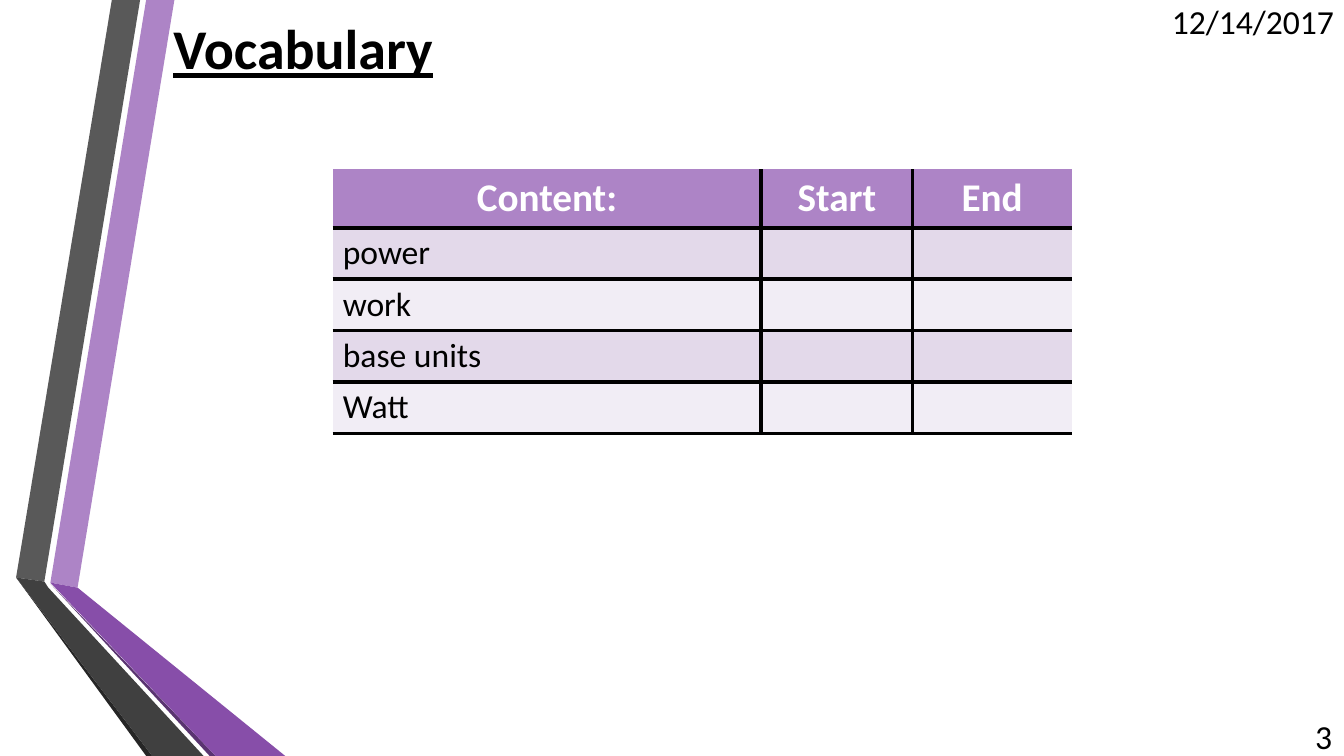
from dataclasses import dataclass

from lxml import etree
from pptx import Presentation
from pptx.dml.color import RGBColor
from pptx.enum.text import MSO_ANCHOR, PP_ALIGN
from pptx.oxml.ns import qn
from pptx.util import Emu, Pt

LEFT, CENTER, RIGHT = PP_ALIGN.LEFT, PP_ALIGN.CENTER, PP_ALIGN.RIGHT
TOP, MIDDLE = MSO_ANCHOR.TOP, MSO_ANCHOR.MIDDLE

EMU_PER_PX = 9144  # 100 px to the inch
FONT = "Calibri"
COLORS = {
    "text": "000000", "header_text": "FFFFFF", "border": "000000",
    "lilac": "AD84C6", "purple": "874EA9", "plum": "5A3471",
    "gray": "595959", "charcoal": "404040", "coal": "262626",
    "band_dark": "E3D9EA", "band_light": "F1EDF5",
}


@dataclass(frozen=True)
class Ribbon:
    color: str
    points: tuple


@dataclass(frozen=True)
class Label:
    text: str
    box: tuple


RIBBONS = [
    Ribbon("lilac", ((50, 578), (77, 583), (173, 0), (145, 0))),
    Ribbon("gray", ((139, 0), (111, 0), (16, 573), (44, 577))),
    Ribbon("coal", ((16, 573), (145, 750), (151, 750))),
    Ribbon("plum", ((50, 579), (208, 750), (214, 750))),
    Ribbon("purple", ((50, 578), (214, 750), (283, 750), (77, 583))),
    Ribbon("charcoal", ((202, 750), (48, 583), (44, 577), (16, 573), (151, 750))),
]
LABELS = [
    Label("12/14/2017", (1129, 1, 204, 40)),
    Label("3", (1258, 710, 73, 40)),
]
TITLE_BOX = (162, 1, 1096, 92)
HEADERS = ["Content:", "Start", "End"]
WORDS = ["power", "work", "base units", "Watt"]
TABLE_LEFT, TABLE_TOP = 330, 168
COLUMN_WIDTHS = [425, 150, 158]
HEADER_HEIGHT, ROW_HEIGHT = 58, 51


def px(n: int) -> Emu:
    return Emu(n * EMU_PER_PX)


def rgb(name: str) -> RGBColor:
    return RGBColor.from_string(COLORS[name])


def write(tf, text: str, *, size: int = 24, color: str = "text", bold: bool = False,
          underline: bool = False, align=LEFT) -> None:
    p = tf.paragraphs[0]
    p.alignment = align
    r = p.add_run()
    r.text = text
    f = r.font
    f.name, f.size, f.bold, f.underline = FONT, Pt(size), bold, underline
    f.color.rgb = rgb(color)


def place(sp, box: tuple) -> None:
    sp.left, sp.top, sp.width, sp.height = map(px, box)


def draw_ribbon(slide, ribbon: Ribbon) -> None:
    builder = slide.shapes.build_freeform(*ribbon.points[0], scale=EMU_PER_PX)
    builder.add_line_segments(ribbon.points[1:], close=True)
    sp = builder.convert_to_shape()
    sp.shadow.inherit = False
    sp.fill.solid()
    sp.fill.fore_color.rgb = rgb(ribbon.color)
    sp.line.fill.background()


def draw_label(slide, label: Label) -> None:
    sp = slide.shapes.add_textbox(*map(px, label.box))
    tf = sp.text_frame
    tf.word_wrap = True
    tf.vertical_anchor = MIDDLE
    write(tf, label.text, align=RIGHT)


def set_borders(cell, edges: str) -> None:
    tc_pr = cell._tc.get_or_add_tcPr()
    for i, edge in enumerate("LRTB"):
        ln = etree.Element(qn(f"a:ln{edge}"), w=str(Pt(3)))
        if edge in edges:
            fill = etree.SubElement(ln, qn("a:solidFill"))
            etree.SubElement(fill, qn("a:srgbClr"), val=COLORS["border"])
        else:
            etree.SubElement(ln, qn("a:noFill"))
        tc_pr.insert(i, ln)


def draw_table(slide) -> None:
    rows = [HEADERS] + [[word, "", ""] for word in WORDS]
    heights = [HEADER_HEIGHT] + [ROW_HEIGHT] * len(WORDS)
    frame = slide.shapes.add_table(
        len(rows), len(HEADERS), px(TABLE_LEFT), px(TABLE_TOP),
        px(sum(COLUMN_WIDTHS)), px(sum(heights)))
    table = frame.table
    table.horz_banding = False
    for column, width in zip(table.columns, COLUMN_WIDTHS):
        column.width = px(width)
    for i, (texts, height) in enumerate(zip(rows, heights)):
        table.rows[i].height = px(height)
        header = i == 0
        fill = "lilac" if header else "band_dark" if i % 2 else "band_light"
        for j, text in enumerate(texts):
            cell = table.cell(i, j)
            cell.fill.solid()
            cell.fill.fore_color.rgb = rgb(fill)
            cell.vertical_anchor = MIDDLE if header else TOP
            # Rules run between cells and under the last row
            edges = "B" if header else "TB"
            edges += "L" if j > 0 else ""
            edges += "R" if j < len(HEADERS) - 1 else ""
            set_borders(cell, edges)
            if header:
                write(cell.text_frame, text, size=28, color="header_text",
                      bold=True, align=CENTER)
            elif text:
                write(cell.text_frame, text)


def main() -> None:
    prs = Presentation()
    prs.slide_width, prs.slide_height = px(1333), px(750)
    slide = prs.slides.add_slide(prs.slide_layouts[5])

    # Ribbons along the left edge
    for ribbon in RIBBONS:
        draw_ribbon(slide, ribbon)

    # Title
    title = slide.shapes.title
    place(title, TITLE_BOX)
    title.text_frame.vertical_anchor = MIDDLE
    write(title.text_frame, "Vocabulary", size=40, bold=True, underline=True)

    # Date and slide number
    for label in LABELS:
        draw_label(slide, label)

    # Vocabulary table
    draw_table(slide)
    prs.save("out.pptx")


if __name__ == "__main__":
    main()
